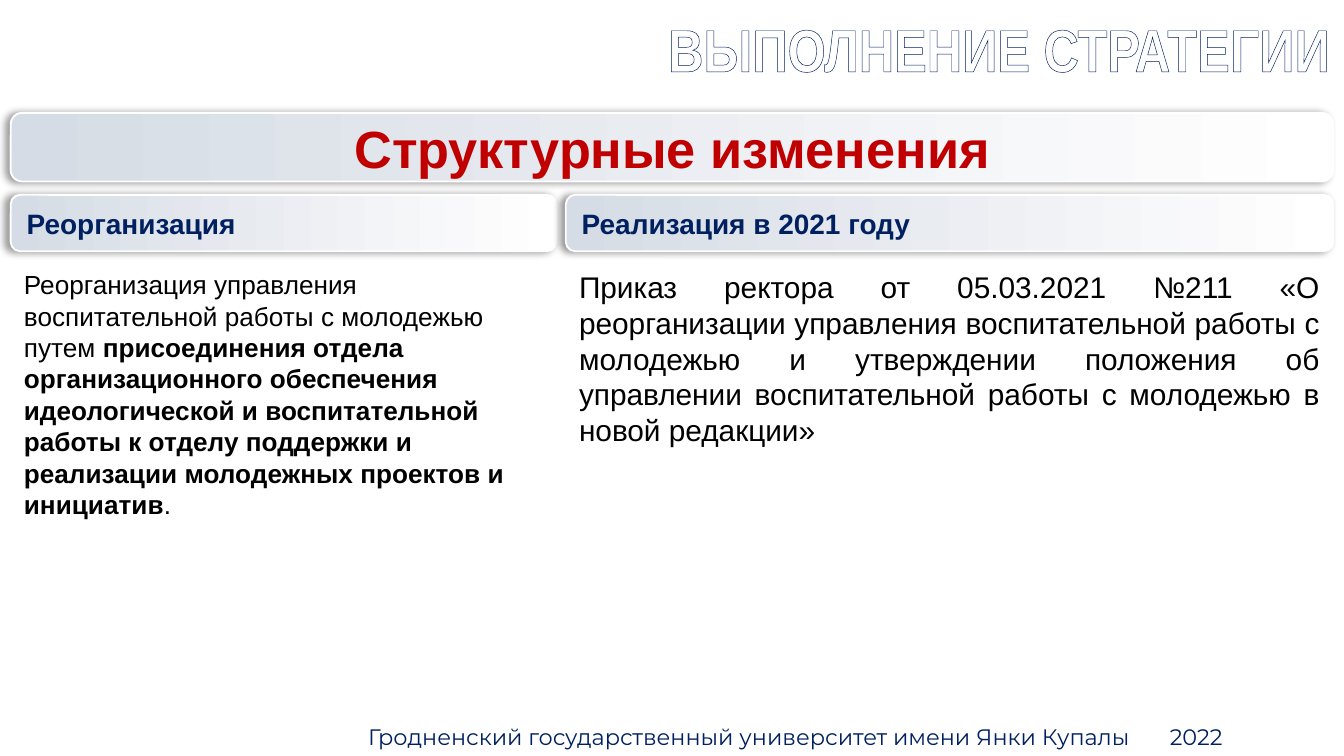
from lxml.etree import SubElement
from pptx import Presentation
from pptx.dml.color import RGBColor
from pptx.enum.shapes import MSO_SHAPE
from pptx.enum.text import MSO_ANCHOR, PP_ALIGN
from pptx.oxml import parse_xml
from pptx.oxml.ns import nsdecls, qn
from pptx.util import Pt

COLORS = {
    "navy": "002060",
    "red": "C00000",
    "black": "000000",
    "white": "FFFFFF",
    "mist": "D6DCE5",
}
LEFT_COLUMN = (5.76, 292.3)
RIGHT_COLUMN = (303.1, 411.1)
FULL_WIDTH = (5.76, 708.5)


def color(name):
    return RGBColor.from_string(COLORS[name])


def write(shape, text, size, ink, font="Arial", bold=False, align=PP_ALIGN.LEFT,
          anchor=MSO_ANCHOR.TOP, after=0):
    frame = shape.text_frame
    frame.word_wrap = True
    frame.vertical_anchor = anchor
    para = frame.paragraphs[0]
    para.alignment = align
    para.space_after = Pt(after)
    spans = [(text, bold)] if isinstance(text, str) else text
    for words, heavy in spans:
        span = para.add_run()
        span.text = words
        span.font.name = font
        span.font.size = Pt(size)
        span.font.bold = heavy
        span.font.color.rgb = color(ink)
    return para


def add_box(page, kind, column, top, height):
    left, width = column
    box = page.shapes.add_shape(kind, Pt(left), Pt(top), Pt(width), Pt(height))
    box.shadow.inherit = False
    return box


def add_banner(page, column, top, height, text, **style):
    box = add_box(page, MSO_SHAPE.ROUNDED_RECTANGLE, column, top, height)
    box.fill.gradient()
    box.fill.gradient_angle = 0
    for stop, name in zip(box.fill.gradient_stops, ("mist", "white")):
        stop.color.rgb = color(name)
    box.line.color.rgb = color("white")
    box.line.width = Pt(1)
    effects = box.element.spPr.find(qn("a:effectLst"))
    effects.append(parse_xml(
        f'<a:outerShdw {nsdecls("a")} blurRad="{Pt(4)}" dist="{Pt(3)}" '
        f'dir="10800000" algn="r" rotWithShape="0"><a:srgbClr val="{COLORS["black"]}">'
        '<a:alpha val="40000"/></a:srgbClr></a:outerShdw>'))
    write(box, text, bold=True, anchor=MSO_ANCHOR.MIDDLE, **style)


def add_body(page, column, text, **style):
    box = add_box(page, MSO_SHAPE.RECTANGLE, column, 140.4, 236.9)
    box.fill.solid()
    box.fill.fore_color.rgb = color("white")
    box.line.fill.background()
    write(box, text, ink="black", **style)


def add_footer(page):
    box = page.shapes.add_textbox(Pt(190.1), Pt(383.8), Pt(532.8), Pt(21.6))
    properties = box.text_frame.paragraphs[0]._p.get_or_add_pPr()
    tabs = SubElement(properties, qn("a:tabLst"))
    SubElement(tabs, qn("a:tab"), pos=str(Pt(429.5)), algn="l")
    write(box, "Гродненский государственный университет имени Янки Купалы\t2022",
          size=12, ink="navy", font="Montserrat")


def set_title(page, text):
    title = page.shapes.title
    title.left, title.top, title.width, title.height = Pt(14.4), Pt(2.9), Pt(705.6), Pt(46.1)
    para = write(title, text, size=32, ink="white", font="Arial Narrow", bold=True,
                 align=PP_ALIGN.RIGHT)
    outline = parse_xml(
        f'<a:ln {nsdecls("a")} w="{Pt(0.75)}"><a:solidFill>'
        f'<a:srgbClr val="{COLORS["navy"]}"/></a:solidFill></a:ln>')
    para.runs[0].font._element.insert(0, outline)


def main():
    deck = Presentation()
    deck.slide_width, deck.slide_height = Pt(720), Pt(405)
    page = deck.slides.add_slide(deck.slide_layouts[5])

    add_footer(page)
    set_title(page, "ВЫПОЛНЕНИЕ СТРАТЕГИИ")
    add_banner(page, FULL_WIDTH, 60.5, 36.7, "Структурные изменения",
               size=28, ink="red", align=PP_ALIGN.CENTER)
    for column, heading in ((LEFT_COLUMN, "Реорганизация"),
                            (RIGHT_COLUMN, "Реализация в 2021 году")):
        add_banner(page, column, 104.4, 30.2, heading, size=15, ink="navy")

    add_body(page, LEFT_COLUMN, [
        ("Реорганизация управления воспитательной работы с молодежью путем ", False),
        ("присоединения отдела организационного обеспечения идеологической и "
         "воспитательной работы к отделу поддержки и реализации молодежных "
         "проектов и инициатив", True),
        (".", False),
    ], size=14, after=12)
    add_body(page, RIGHT_COLUMN,
             "Приказ ректора от 05.03.2021 №211 «О реорганизации управления "
             "воспитательной работы с молодежью и утверждении положения об "
             "управлении воспитательной работы с молодежью в новой редакции»",
             size=16, align=PP_ALIGN.JUSTIFY)
    deck.save("out.pptx")


if __name__ == "__main__":
    main()
